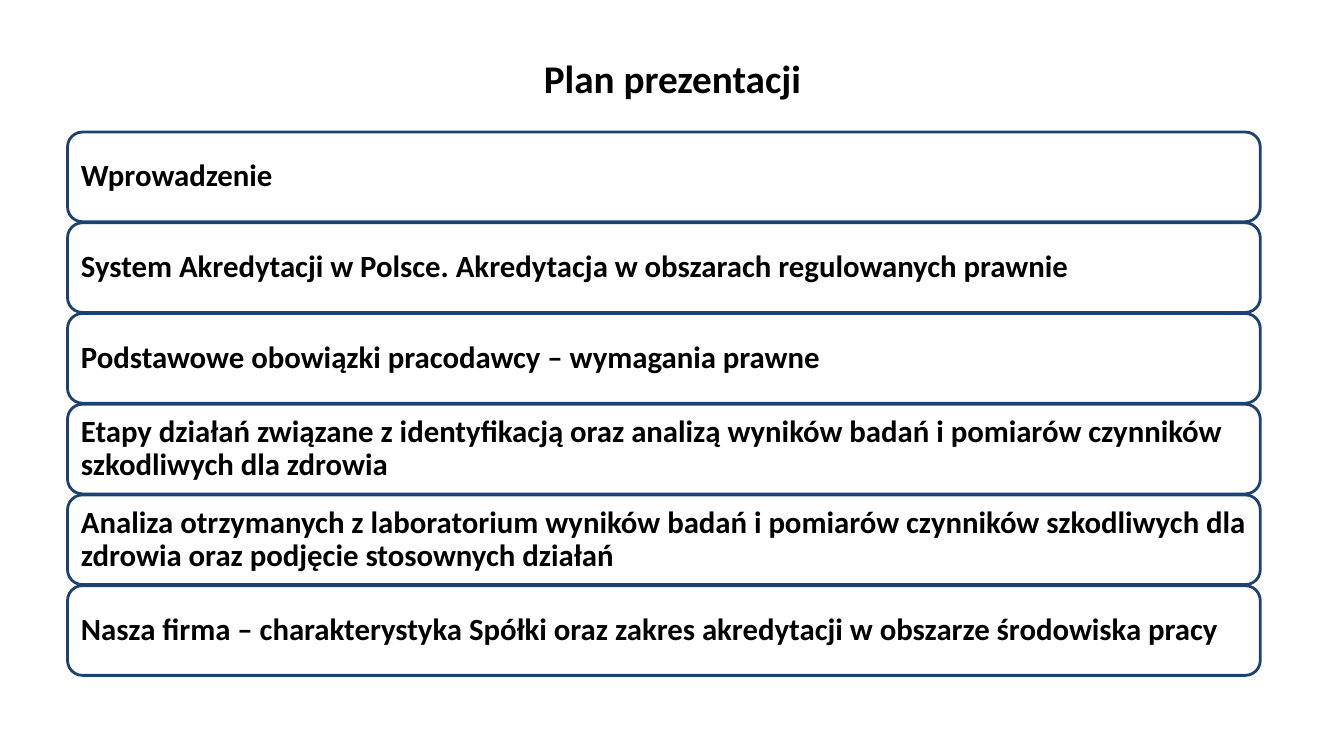
from pptx import Presentation
from pptx.dml.color import RGBColor
from pptx.enum.shapes import MSO_SHAPE
from pptx.enum.text import MSO_ANCHOR, PP_ALIGN
from pptx.util import Pt

ROUNDED = MSO_SHAPE.ROUNDED_RECTANGLE
MIDDLE = MSO_ANCHOR.MIDDLE
LEFT, CENTER = PP_ALIGN.LEFT, PP_ALIGN.CENTER
PX = 9144  # 100 px to the inch

TOPICS = [
    "Wprowadzenie",
    "System Akredytacji w Polsce. Akredytacja w obszarach regulowanych prawnie",
    "Podstawowe obowiązki pracodawcy – wymagania prawne",
    "Etapy działań związane z identyfikacją oraz analizą wyników badań "
    "i pomiarów czynników szkodliwych dla zdrowia",
    "Analiza otrzymanych z laboratorium wyników badań i pomiarów czynników "
    "szkodliwych dla zdrowia oraz podjęcie stosownych działań",
    "Nasza firma – charakterystyka Spółki oraz zakres akredytacji "
    "w obszarze środowiska pracy",
]
MARGIN, FIRST_TOP = 67, 131
BAR_WIDTH, BAR_HEIGHT, PITCH = 1183, 89, 90


def color(value):
    return RGBColor.from_string(value)


def write(shape, text, size, align):
    frame = shape.text_frame
    frame.word_wrap = True
    frame.vertical_anchor = MIDDLE
    frame.margin_left = frame.margin_right = 9 * PX
    frame.margin_top = frame.margin_bottom = 9 * PX
    frame.text = text
    para = frame.paragraphs[0]
    para.alignment = align
    para.line_spacing = 0.9
    font = para.runs[0].font
    font.name = "Calibri"
    font.size = Pt(size)
    font.bold = True
    font.color.rgb = color("000000")


deck = Presentation()
deck.slide_width, deck.slide_height = 1333 * PX, 750 * PX
page = deck.slides.add_slide(deck.slide_layouts[6])

# Title
title = page.shapes.add_textbox(MARGIN * PX, 30 * PX, 1200 * PX, 101 * PX)
write(title, "Plan prezentacji", 28, CENTER)

# One outlined bar per topic
for index, topic in enumerate(TOPICS):
    top = FIRST_TOP + index * PITCH
    bar = page.shapes.add_shape(
        ROUNDED, MARGIN * PX, top * PX, BAR_WIDTH * PX, BAR_HEIGHT * PX)
    bar.shadow.inherit = False
    bar.fill.solid()
    bar.fill.fore_color.rgb = color("FFFFFF")
    bar.line.color.rgb = color("1C4271")
    bar.line.width = Pt(2)
    write(bar, topic, 22, LEFT)

deck.save("out.pptx")
